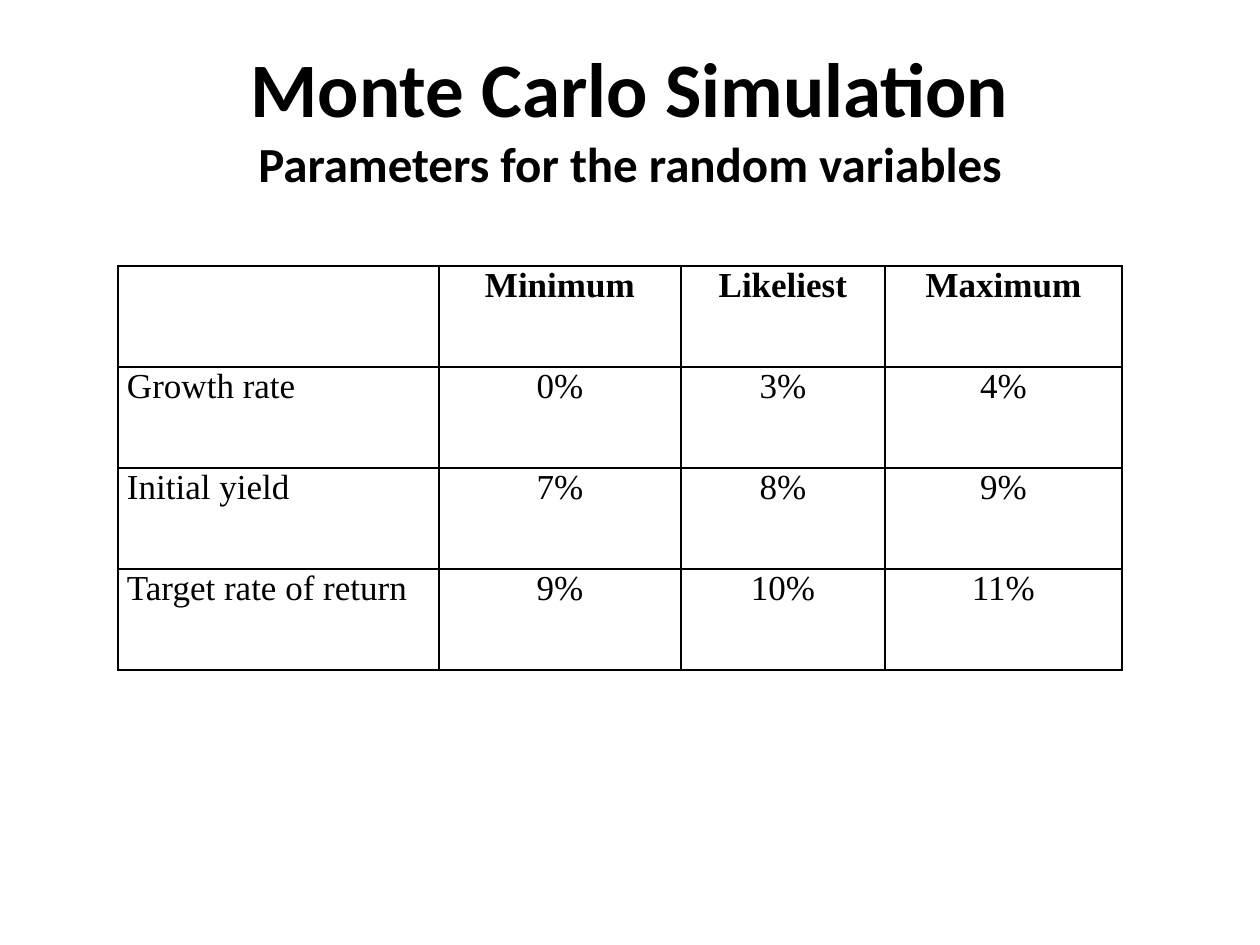
from lxml.etree import SubElement
from pptx import Presentation
from pptx.dml.color import RGBColor
from pptx.enum.text import MSO_ANCHOR, PP_ALIGN
from pptx.oxml.ns import qn
from pptx.util import Pt

THEME = {
    "ink": "000000",
    "title_font": "Calibri",
    "table_font": "Times New Roman",
    "title_size": 44,
    "subtitle_size": 28,
    "table_size": 20,
    "border_width": 1,
}
PX = 914400 / 126


def px(length):
    return round(length * PX)


def add_run(paragraph, text, **font_format):
    run = paragraph.add_run()
    run.text = text
    for name, value in font_format.items():
        setattr(run.font, name, value)
    run.font.color.rgb = RGBColor.from_string(THEME["ink"])


presentation = Presentation()
presentation.slide_width, presentation.slide_height = px(1260), px(945)
slide = presentation.slides.add_slide(presentation.slide_layouts[6])

# Title
title = slide.shapes.add_textbox(px(63), px(38), px(1134), px(157))
title.text_frame.word_wrap = True
title.text_frame.vertical_anchor = MSO_ANCHOR.MIDDLE
paragraph = title.text_frame.paragraphs[0]
paragraph.alignment = PP_ALIGN.CENTER
title_format = {"name": THEME["title_font"], "bold": True}
add_run(paragraph, "Monte Carlo Simulation", size=Pt(THEME["title_size"]), **title_format)
paragraph.add_line_break()
add_run(paragraph, "Parameters for the random variables",
        size=Pt(THEME["subtitle_size"]), **title_format)

# Parameter table
parameters = [
    ["", "Minimum", "Likeliest", "Maximum"],
    ["Growth rate", "0%", "3%", "4%"],
    ["Initial yield", "7%", "8%", "9%"],
    ["Target rate of return", "9%", "10%", "11%"],
]
column_widths = [321, 242, 204, 237]
row_height = 101
cell_format = {
    "margin_left": px(9), "margin_right": px(9),
    "margin_top": 0, "margin_bottom": 0,
    "vertical_anchor": MSO_ANCHOR.TOP,
}
table = slide.shapes.add_table(
    len(parameters), len(column_widths), px(118), px(266),
    px(sum(column_widths)), px(row_height * len(parameters))).table
table.first_row = table.horz_banding = False
for column, width in zip(table.columns, column_widths):
    column.width = px(width)

for row_index, values in enumerate(parameters):
    table.rows[row_index].height = px(row_height)
    for column_index, text in enumerate(values):
        cell = table.cell(row_index, column_index)
        for name, value in cell_format.items():
            setattr(cell, name, value)
        properties = cell._tc.get_or_add_tcPr()
        for side in ("lnL", "lnR", "lnT", "lnB"):
            border = SubElement(properties, qn(f"a:{side}"), w=str(Pt(THEME["border_width"])))
            fill = SubElement(border, qn("a:solidFill"))
            SubElement(fill, qn("a:srgbClr"), val=THEME["ink"])
        cell.fill.background()
        if text:
            paragraph = cell.text_frame.paragraphs[0]
            paragraph.alignment = PP_ALIGN.CENTER if column_index else PP_ALIGN.JUSTIFY
            add_run(paragraph, text, name=THEME["table_font"],
                    size=Pt(THEME["table_size"]), bold=row_index == 0)

presentation.save("out.pptx")
